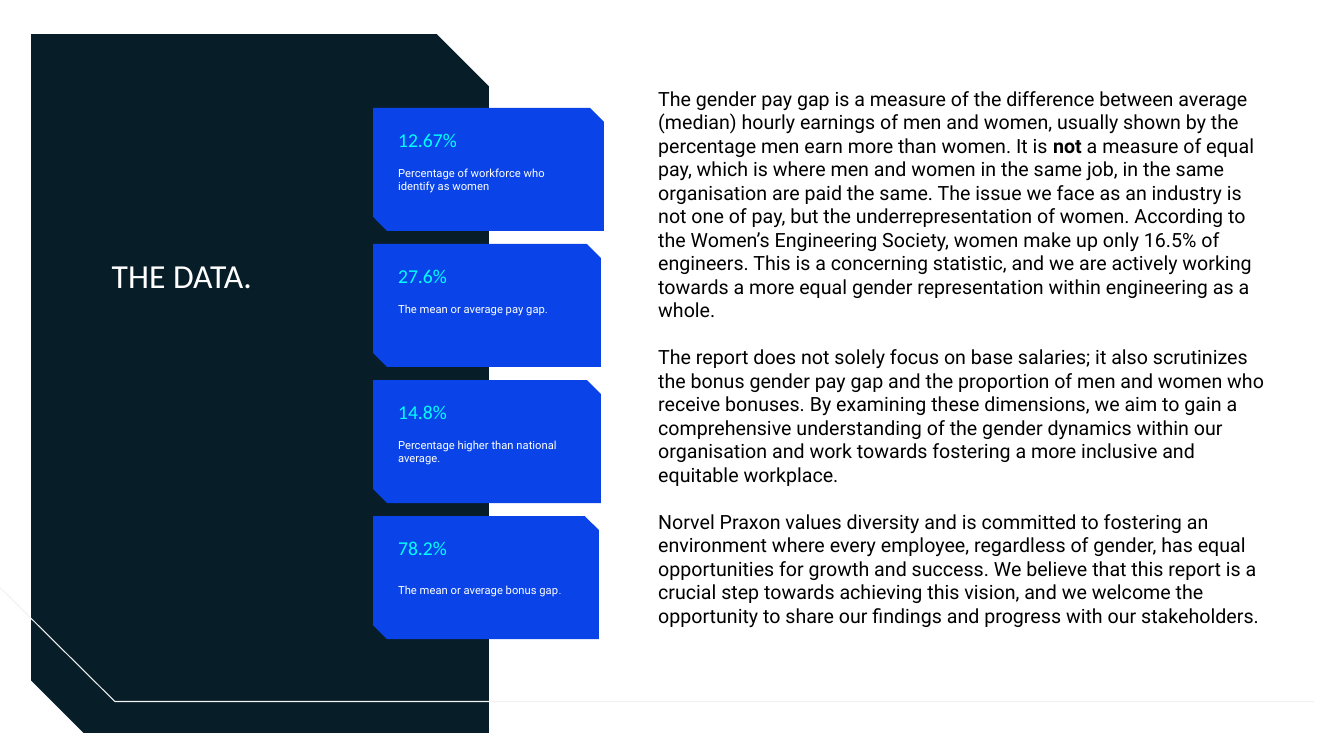
from dataclasses import dataclass

from pptx import Presentation
from pptx.dml.color import RGBColor
from pptx.enum.shapes import MSO_SHAPE
from pptx.util import Inches, Pt

SNIPPED = MSO_SHAPE.SNIP_2_DIAG_RECTANGLE


@dataclass(frozen=True)
class Theme:
    navy: str = "071E29"
    blue: str = "0A44E8"
    cyan: str = "00FFFF"
    white: str = "FFFFFF"
    black: str = "000000"
    rule: str = "F2F2F2"
    heading_font: str = "Calibri"
    body_font: str = "Roboto"
    stop_font: str = "Manrope"
    title_size: int = 24
    body_size: int = 14
    label_size: int = 8
    body_gap: float = 16.6
    snip: float = 0.114


class SlideBuilder:
    def __init__(self, slide, theme):
        self.shapes = slide.shapes
        self.theme = theme

    def panel(self, left, top, width, height, color):
        panel = self.shapes.add_shape(
            SNIPPED, Inches(left), Inches(top), Inches(width), Inches(height)
        )
        panel.adjustments[0] = 0
        panel.adjustments[1] = self.theme.snip
        panel.shadow.inherit = False
        panel.fill.solid()
        panel.fill.fore_color.rgb = RGBColor.from_string(color)
        panel.line.fill.background()

    def text(self, left, top, width, height, paragraphs, gap=0):
        frame = self.shapes.add_textbox(
            Inches(left), Inches(top), Inches(width), Inches(height)
        ).text_frame
        frame.word_wrap = True
        for index, runs in enumerate(paragraphs):
            paragraph = frame.add_paragraph() if index else frame.paragraphs[0]
            if index:
                paragraph.space_before = Pt(gap)
            for words, font, size, color, bold in runs:
                run = paragraph.add_run()
                run.text = words
                run.font.name = font
                run.font.size = Pt(size)
                run.font.bold = bold
                run.font.color.rgb = RGBColor.from_string(color)

    def polyline(self, points, color, weight):
        start, *rest = [(Inches(x), Inches(y)) for x, y in points]
        builder = self.shapes.build_freeform(*start)
        builder.add_line_segments(rest, close=False)
        line = builder.convert_to_shape()
        line.shadow.inherit = False
        line.fill.background()
        line.line.color.rgb = RGBColor.from_string(color)
        line.line.width = Pt(weight)

    def heading(self, words, size, color):
        return words, self.theme.heading_font, size, color, False

    def label(self, words, font=None):
        theme = self.theme
        return words, font or theme.body_font, theme.label_size, theme.white, False

    def body(self, words, bold=False):
        theme = self.theme
        return words, theme.body_font, theme.body_size, theme.black, bold


def main():
    deck = Presentation()
    deck.slide_width, deck.slide_height = Inches(13.33), Inches(7.5)
    theme = Theme()
    page = SlideBuilder(deck.slides.add_slide(deck.slide_layouts[6]), theme)

    page.panel(0.31, 0.34, 4.54, 6.93, theme.navy)
    title = page.heading("THE DATA.", theme.title_size, theme.white)
    page.text(1.01, 2.48, 2.93, 0.5, [[title]])
    page.polyline([(-0.17, 5.66), (1.14, 6.96), (13.03, 6.96)], theme.rule, 0.75)

    statistics = [
        ("12.67%", [page.label("Percentage of workforce who identify as women")], 2.29, 2.01, 10.4),
        ("27.6%", [page.label("The mean or average pay gap.")], 2.26, 2.15, 10.4),
        ("14.8%", [page.label("Percentage higher than national average.")], 2.26, 2.03, 10.4),
        (
            "78.2%",
            [page.label("The mean or average bonus gap"), page.label(".", theme.stop_font)],
            2.24, 2.12, 16.6,
        ),
    ]
    for row, (figure, caption, card_width, text_width, gap) in enumerate(statistics):
        top = 1.07 + row * 1.35
        page.panel(3.7, top, card_width, 1.22, theme.blue)
        value = page.heading(figure, theme.body_size, theme.cyan)
        page.text(3.85, top + 0.15, text_width, 0.76, [[value], caption], gap)

    page.text(6.43, 0.81, 6.3, 5.28, [
        [
            page.body(
                "The gender pay gap is a measure of the difference between average "
                "(median) hourly earnings of men and women, usually shown by the "
                "percentage men earn more than women. It is "
            ),
            page.body("not", bold=True),
            page.body(
                " a measure of equal pay, which is where men and women in the same job, "
                "in the same organisation are paid the same. The issue we face as an "
                "industry is not one of pay, but the underrepresentation of women. "
                "According to the Women’s Engineering Society, women make up only 16.5% "
                "of engineers. This is a concerning statistic, and we are actively "
                "working towards a more equal gender representation within engineering "
                "as a whole."
            ),
        ],
        [page.body(
            "The report does not solely focus on base salaries; it also scrutinizes the "
            "bonus gender pay gap and the proportion of men and women who receive "
            "bonuses. By examining these dimensions, we aim to gain a comprehensive "
            "understanding of the gender dynamics within our organisation and work "
            "towards fostering a more inclusive and equitable workplace."
        )],
        [page.body(
            "Norvel Praxon values diversity and is committed to fostering an environment "
            "where every employee, regardless of gender, has equal opportunities for "
            "growth and success. We believe that this report is a crucial step towards "
            "achieving this vision, and we welcome the opportunity to share our findings "
            "and progress with our stakeholders."
        )],
    ], theme.body_gap)

    deck.save("out.pptx")


if __name__ == "__main__":
    main()
